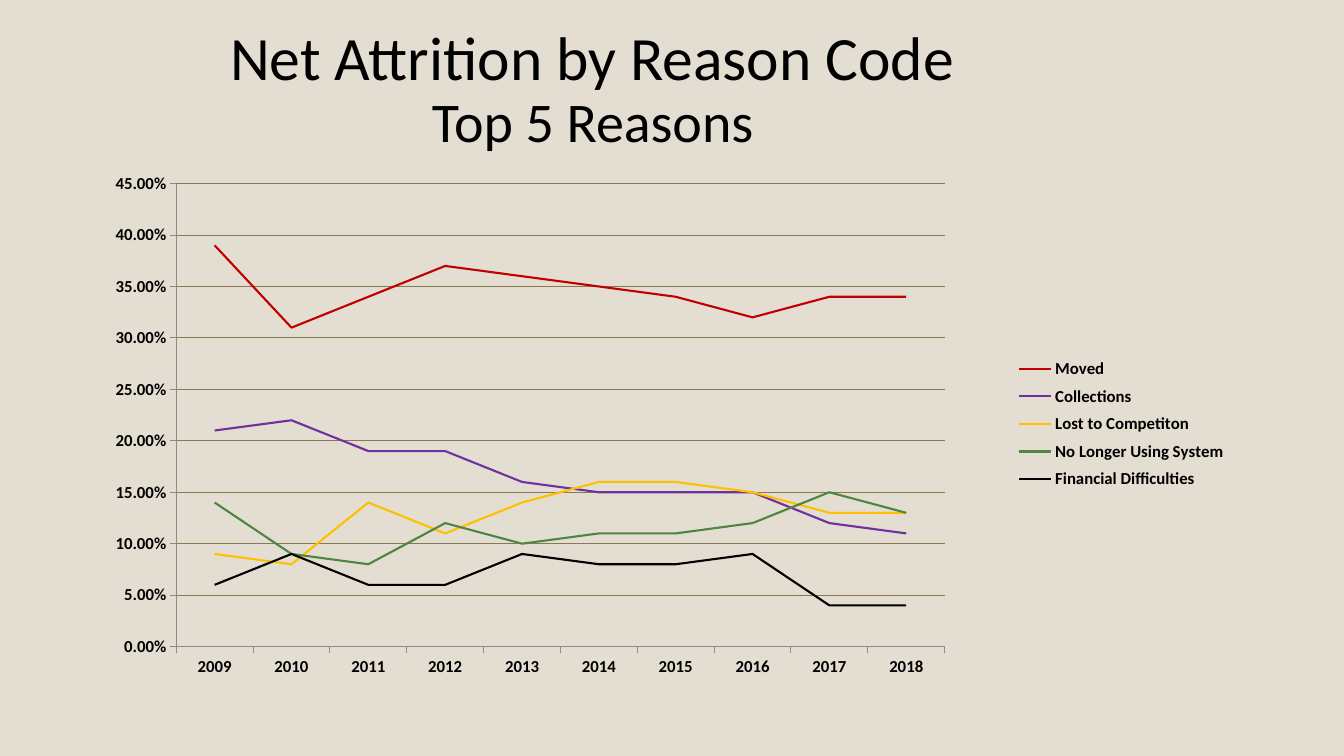
from lxml import etree
from pptx import Presentation
from pptx.chart.data import CategoryChartData
from pptx.dml.color import RGBColor
from pptx.enum import chart as chart_enum
from pptx.enum import text
from pptx.oxml import ns
from pptx.util import Cm, Pt

FONT = "Calibri"
BACKGROUND = RGBColor(0xE3, 0xDE, 0xD1)
BLACK = RGBColor(0x00, 0x00, 0x00)
GRID = RGBColor(0x88, 0x79, 0x52)
AXIS = RGBColor(0x8B, 0x8B, 0x8B)
RED = RGBColor(0xC0, 0x00, 0x00)
PURPLE = RGBColor(0x70, 0x30, 0xA0)
GOLD = RGBColor(0xFF, 0xC0, 0x00)
GREEN = RGBColor(0x4E, 0x85, 0x42)

YEARS = [str(year) for year in range(2009, 2019)]
REASONS = [
    ("Moved", RED, [0.39, 0.31, 0.34, 0.37, 0.36, 0.35, 0.34, 0.32, 0.34, 0.34]),
    ("Collections", PURPLE, [0.21, 0.22, 0.19, 0.19, 0.16, 0.15, 0.15, 0.15, 0.12, 0.11]),
    ("Lost to Competiton", GOLD, [0.09, 0.08, 0.14, 0.11, 0.14, 0.16, 0.16, 0.15, 0.13, 0.13]),
    ("No Longer Using System", GREEN, [0.14, 0.09, 0.08, 0.12, 0.1, 0.11, 0.11, 0.12, 0.15, 0.13]),
    ("Financial Difficulties", BLACK, [0.06, 0.09, 0.06, 0.06, 0.09, 0.08, 0.08, 0.09, 0.04, 0.04]),
]


def style_font(font, size, bold=False):
    font.name = FONT
    font.size = Pt(size)
    font.bold = bold
    font.color.rgb = BLACK


def style_line(line, color, width):
    line.color.rgb = color
    line.width = Pt(width)


def add_title(slide):
    shape = slide.shapes.add_textbox(Cm(3), Cm(0.46), Cm(23.87), Cm(3.66))
    frame = shape.text_frame
    frame.word_wrap = True
    frame.vertical_anchor = text.MSO_ANCHOR.MIDDLE
    paragraph = frame.paragraphs[0]
    paragraph.alignment = text.PP_ALIGN.CENTER
    paragraph.line_spacing = 0.9
    heading = paragraph.add_run()
    heading.text = "Net Attrition by Reason Code"
    style_font(heading.font, 44)
    paragraph.add_line_break()
    subheading = paragraph.add_run()
    subheading.text = "Top 5 Reasons"
    style_font(subheading.font, 40)


def set_layout(parent, index, inner=False, **fractions):
    for old in parent.findall(ns.qn("c:layout")):
        parent.remove(old)
    layout = etree.Element(ns.qn("c:layout"))
    manual = etree.SubElement(layout, ns.qn("c:manualLayout"))
    settings = {"layoutTarget": "inner"} if inner else {}
    settings.update(xMode="edge", yMode="edge", **fractions)
    for name, value in settings.items():
        etree.SubElement(manual, ns.qn("c:" + name)).set("val", str(value))
    parent.insert(index, layout)


def style_axis(axis):
    axis.major_tick_mark = chart_enum.XL_TICK_MARK.OUTSIDE
    axis.minor_tick_mark = chart_enum.XL_TICK_MARK.NONE
    style_font(axis.tick_labels.font, 12, True)
    style_line(axis.format.line, AXIS, 0.75)


def style_value_axis(axis):
    style_axis(axis)
    axis.minimum_scale = 0
    axis.maximum_scale = 0.45
    axis.major_unit = 0.05
    axis.tick_labels.number_format = "0.00%"
    axis.tick_labels.number_format_is_linked = False
    axis.has_major_gridlines = True
    style_line(axis.major_gridlines.format.line, GRID, 0.75)


def add_attrition_chart(slide):
    data = CategoryChartData(number_format="0.00%")
    data.categories = YEARS
    for name, _, shares in REASONS:
        data.add_series(name, shares)
    chart = slide.shapes.add_chart(
        chart_enum.XL_CHART_TYPE.LINE, Cm(1.76), Cm(4.13), Cm(30.12), Cm(13.11), data
    ).chart
    chart.has_title = False
    style_font(chart.font, 10)
    style_axis(chart.category_axis)
    style_value_axis(chart.value_axis)

    plot = chart.plots[0]
    plot.vary_by_categories = False
    for series, (_, color, _) in zip(plot.series, REASONS):
        series.smooth = False
        series.marker.style = chart_enum.XL_MARKER_STYLE.NONE
        style_line(series.format.line, color, 1.5)

    chart.has_legend = True
    legend = chart.legend
    legend.position = chart_enum.XL_LEGEND_POSITION.RIGHT
    legend.include_in_layout = False
    style_font(legend.font, 12, True)
    plot_area = chart.element.find(".//" + ns.qn("c:plotArea"))
    set_layout(plot_area, 0, inner=True, x=0.089, y=0.038, w=0.643, h=0.89)
    legend_element = chart.element.find(".//" + ns.qn("c:legend"))
    set_layout(legend_element, 1, x=0.79, y=0.36, w=0.18, h=0.28)


def main():
    presentation = Presentation()
    presentation.slide_width = Cm(33.87)
    presentation.slide_height = Cm(19.05)
    slide = presentation.slides.add_slide(presentation.slide_layouts[6])
    slide.background.fill.solid()
    slide.background.fill.fore_color.rgb = BACKGROUND
    add_title(slide)
    add_attrition_chart(slide)
    presentation.save("out.pptx")


if __name__ == "__main__":
    main()
